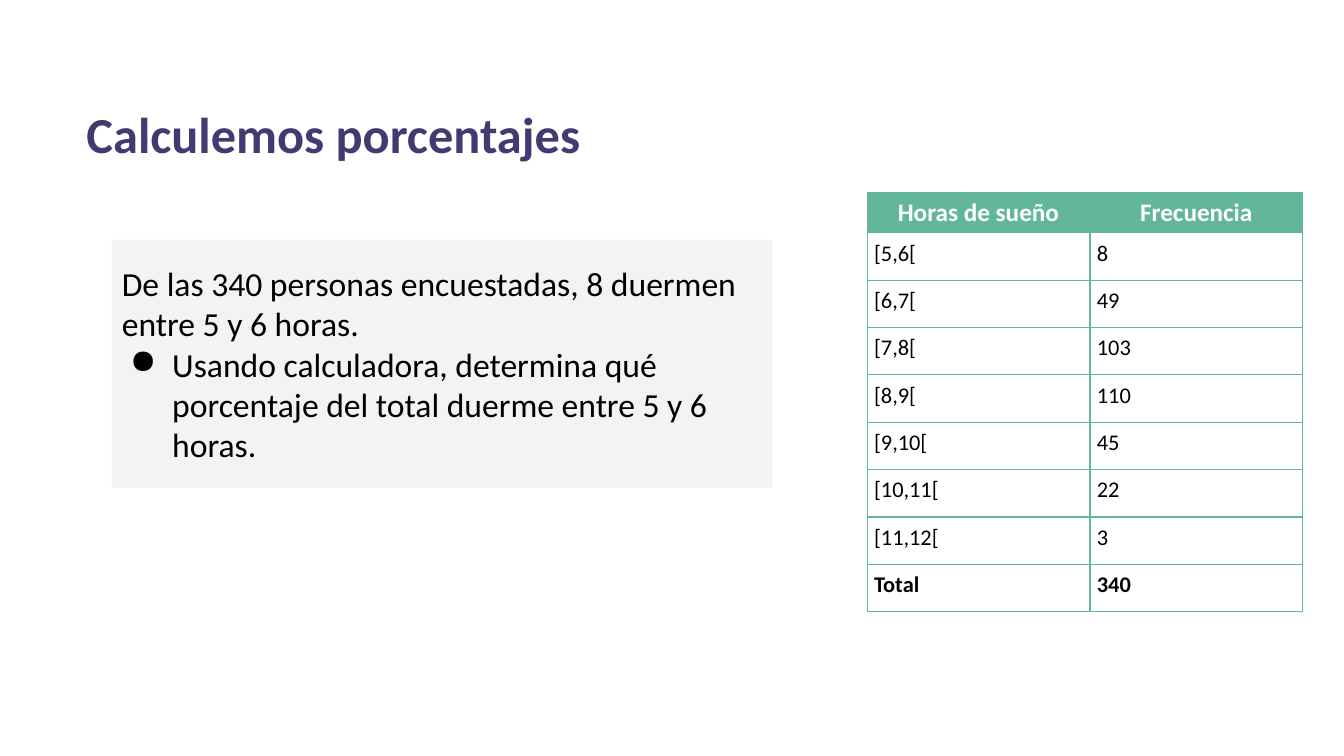
from lxml import etree
from pptx import Presentation
from pptx.dml.color import RGBColor
from pptx.enum import shapes, text
from pptx.oxml import ns
from pptx.util import Inches, Pt

GREEN = "63B799"


def paint(item, color):
    """Give a fill or a line one solid colour."""
    item.solid()
    item.fore_color.rgb = RGBColor.from_string(color)


def style(para, size, color, bold=False):
    for run in para.runs:
        font = run.font
        font.name, font.size, font.bold = "Calibri", Pt(size), bold
        font.color.rgb = RGBColor.from_string(color)


def bullet(para, color, left, hang):
    props = para._p.get_or_add_pPr()
    props.set("marL", str(Inches(left)))
    props.set("indent", str(Inches(-hang)))
    tint = etree.SubElement(props, ns.qn("a:buClr"))
    etree.SubElement(tint, ns.qn("a:srgbClr"), val=color)
    etree.SubElement(props, ns.qn("a:buChar"), char="●")


def border(cell, color, width):
    props = cell._tc.get_or_add_tcPr()
    for side in ("lnL", "lnR", "lnT", "lnB"):
        line = etree.SubElement(props, ns.qn("a:" + side), w=str(Pt(width)))
        fill = etree.SubElement(line, ns.qn("a:solidFill"))
        etree.SubElement(fill, ns.qn("a:srgbClr"), val=color)


def title(slide, left, top, width, height):
    box = slide.shapes.add_textbox(
        Inches(left), Inches(top), Inches(width), Inches(height))
    frame = box.text_frame
    frame.word_wrap = True
    frame.text = "Calculemos porcentajes"
    style(frame.paragraphs[0], 36, "423B71", True)


def task(slide, left, top, width, height):
    box = slide.shapes.add_shape(
        shapes.MSO_SHAPE.RECTANGLE,
        Inches(left), Inches(top), Inches(width), Inches(height))
    box.shadow.inherit = False
    paint(box.fill, "F3F3F3")
    box.line.fill.background()
    frame = box.text_frame
    frame.word_wrap = True
    frame.vertical_anchor = text.MSO_ANCHOR.MIDDLE
    frame.margin_left = frame.margin_right = Inches(0.1)
    frame.margin_top = frame.margin_bottom = Inches(0.1)
    frame.text = ("De las 340 personas encuestadas, 8 duermen entre 5 y 6 horas.\n"
                  "Usando calculadora, determina qué porcentaje del total "
                  "duerme entre 5 y 6 horas.")
    bullet(frame.paragraphs[1], "000000", 0.5, 0.42)
    for para in frame.paragraphs:
        para.alignment = text.PP_ALIGN.LEFT
        style(para, 24, "000000")


def sleep(slide, left, top, width, height):
    counts = [8, 49, 103, 110, 45, 22, 3]
    rows = [("Horas de sueño", "Frecuencia")]
    rows += [(f"[{hour},{hour + 1}[", count)
             for hour, count in enumerate(counts, 5)]
    rows.append(("Total", sum(counts)))
    table = slide.shapes.add_table(
        len(rows), 2, Inches(left), Inches(top),
        Inches(width), Inches(height)).table

    # Column widths and row heights
    first, head = 2.21, 0.39
    table.columns[0].width = Inches(first)
    table.columns[1].width = Inches(width - first)
    for row in table.rows:
        row.height = Inches((height - head) / (len(rows) - 1))
    table.rows[0].height = Inches(head)

    # Cells
    for r, row in enumerate(rows):
        for c, value in enumerate(row):
            cell = table.cell(r, c)
            cell.text = str(value)
            para = cell.text_frame.paragraphs[0]
            border(cell, GREEN, 1)
            side, edge = (0.1, 0.05) if r == 0 else (0.07, 0.07)
            cell.margin_left = cell.margin_right = Inches(side)
            cell.margin_top = cell.margin_bottom = Inches(edge)
            if r == 0:
                paint(cell.fill, GREEN)
                cell.vertical_anchor = text.MSO_ANCHOR.MIDDLE
                para.alignment = text.PP_ALIGN.CENTER
                style(para, 18, "FFFFFF", True)
            else:
                cell.fill.background()
                style(para, 16, "000000", r == len(rows) - 1)


def main():
    deck = Presentation()
    deck.slide_width, deck.slide_height = Inches(13.33), Inches(7.5)
    slide = deck.slides.add_slide(deck.slide_layouts[6])
    title(slide, 0.76, 0.97, 8.93, 0.71)
    task(slide, 1.11, 2.38, 6.55, 2.46)
    sleep(slide, 8.6, 1.91, 4.32, 4.15)
    deck.save("out.pptx")


if __name__ == "__main__":
    main()
